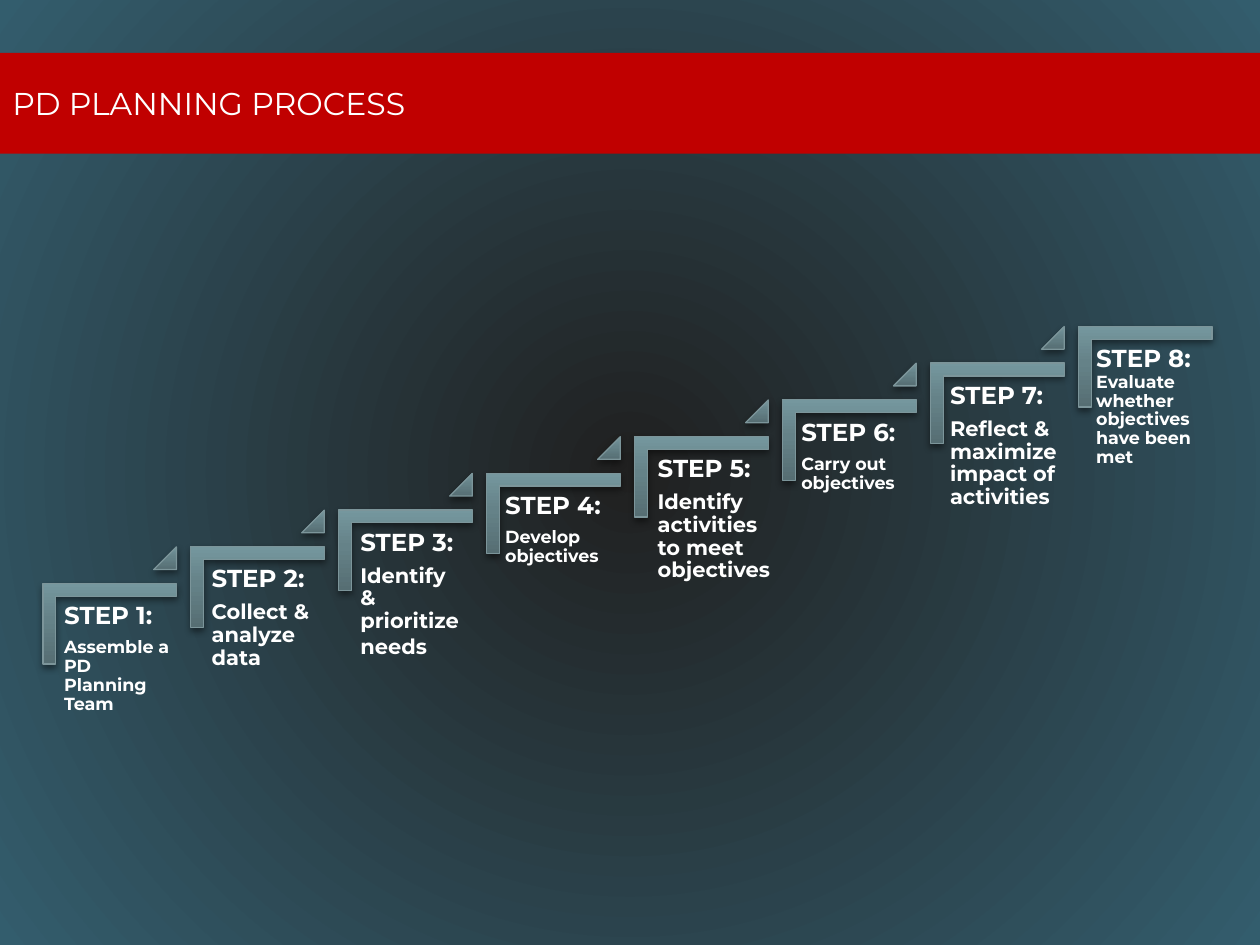
from pptx import Presentation
from pptx.dml.color import RGBColor
from pptx.enum.shapes import MSO_SHAPE
from pptx.enum.text import MSO_ANCHOR, PP_ALIGN
from pptx.oxml import parse_xml
from pptx.oxml.ns import nsdecls, qn
from pptx.util import Inches, Pt
from lxml import etree

RECTANGLE = MSO_SHAPE.RECTANGLE
CORNER = MSO_SHAPE.CORNER
TRIANGLE = MSO_SHAPE.ISOSCELES_TRIANGLE
MIDDLE = MSO_ANCHOR.MIDDLE
LEFT = PP_ALIGN.LEFT

FONT = "Montserrat"
WHITE = "FFFFFF"
STEEL = [(0, "566E73"), (55, "658288"), (100, "75979E")]
NIGHT = [(0, "202020"), (100, "335D6D")]
UPWARD = '<a:lin ang="16200000" scaled="0"/>'
RADIAL = '<a:path path="circle"><a:fillToRect l="50000" t="50000" r="50000" b="50000"/></a:path>'
SHADOW = (
    f'<a:effectLst {nsdecls("a")}><a:outerShdw blurRad="50800" dist="25400" dir="5400000" '
    'rotWithShape="0"><a:srgbClr val="000000"><a:alpha val="44000"/></a:srgbClr>'
    "</a:outerShdw></a:effectLst>"
)


def color(value):
    return RGBColor.from_string(value)


def gradient(stops, direction):
    marks = "".join(
        f'<a:gs pos="{place * 1000}"><a:srgbClr val="{color(value)}"/></a:gs>' for place, value in stops
    )
    return f'<a:gradFill {nsdecls("a")} rotWithShape="0"><a:gsLst>{marks}</a:gsLst>{direction}</a:gradFill>'


deck = Presentation()
deck.slide_width = Inches(10)
deck.slide_height = Inches(7.5)
page = deck.slides.add_slide(deck.slide_layouts[6])
page.element[0].insert(0, parse_xml(
    f'<p:bg {nsdecls("p")}><p:bgPr>{gradient(NIGHT, RADIAL)}'
    f'<a:effectLst {nsdecls("a")}/></p:bgPr></p:bg>'
))

banner = page.shapes.add_shape(RECTANGLE, 0, Inches(0.42), Inches(10), Inches(0.8))
banner.shadow.inherit = False
banner.fill.solid()
banner.fill.fore_color.rgb = color("C00000")
banner.line.fill.background()
banner.text_frame.vertical_anchor = MIDDLE
heading = banner.text_frame.paragraphs[0]
heading.alignment = LEFT
span = heading.add_run()
span.text = "PD PLANNING PROCESS"
span.font.name = FONT
span.font.size = Pt(18)
span.font.color.rgb = color(WHITE)

steps = [
    (0.45, 0.96, 10, "Assemble a PD Planning Team"),
    (1.62, 0.96, 12, "Collect & analyze data"),
    (2.8, 0.96, 12, "Identify & prioritize needs"),
    (3.95, 1, 10, "Develop objectives"),
    (5.16, 1.13, 12, "Identify activities to meet objectives"),
    (6.3, 1, 10, "Carry out objectives"),
    (7.48, 1.08, 12, "Reflect & maximize impact of activities"),
    (8.64, 1.02, 10, "Evaluate whether objectives have been met"),
]
last = len(steps) - 1
stride = (8.77 - 0.55) / last
rise = (4.42 - 2.38) / last
staircase = page.shapes.add_group_shape()

for index, (text_left, text_width, size, action) in enumerate(steps):
    left = 0.55 + stride * index
    top = 4.42 - rise * index
    parts = [(CORNER, left, top, 0.64, 1.06, 90, [0.16, 0.16])]
    if index < last:
        parts.append((TRIANGLE, left + 0.67, top - 0.08, 0.18, 0.18, 0, [1]))
    for kind, part_left, part_top, width, height, rotation, adjustments in parts:
        part = staircase.shapes.add_shape(
            kind, Inches(part_left), Inches(part_top), Inches(width), Inches(height)
        )
        part.rotation = rotation
        for position, amount in enumerate(adjustments):
            part.adjustments[position] = amount
        properties = part.element.spPr
        properties.append(parse_xml(gradient(STEEL, UPWARD)))
        part.line.color.rgb = color("7C959A")
        part.line.width = Pt(0.75)
        properties.append(parse_xml(SHADOW))

    box = staircase.shapes.add_textbox(
        Inches(text_left), Inches(top + 0.31), Inches(text_width), Inches(0.84)
    )
    frame = box.text_frame
    frame.word_wrap = True
    for side in ("left", "right", "top", "bottom"):
        setattr(frame, f"margin_{side}", Inches(0.06))
    label = (f"STEP {index + 1}:", 14)
    lines = [[label], [(action, size)]]
    if index == 2:
        lines[1].append(("\t", 14))
    if index == last:
        lines = [[label, (action, size)]]
    for number, pieces in enumerate(lines):
        para = frame.paragraphs[0] if number == 0 else frame.add_paragraph()
        para.line_spacing = 0.9
        after = etree.SubElement(para._p.get_or_add_pPr(), qn("a:spcAft"))
        etree.SubElement(after, qn("a:spcPct"), val="35000")
        for order, (words, points) in enumerate(pieces):
            if index == last and order == 1:
                para.add_line_break()
                etree.SubElement(para._p[-1], qn("a:rPr"), sz="1400")
            span = para.add_run()
            span.text = words
            span.font.color.rgb = color(WHITE)
            for name, value in {"name": FONT, "size": Pt(points), "bold": True}.items():
                setattr(span.font, name, value)

deck.save("out.pptx")
